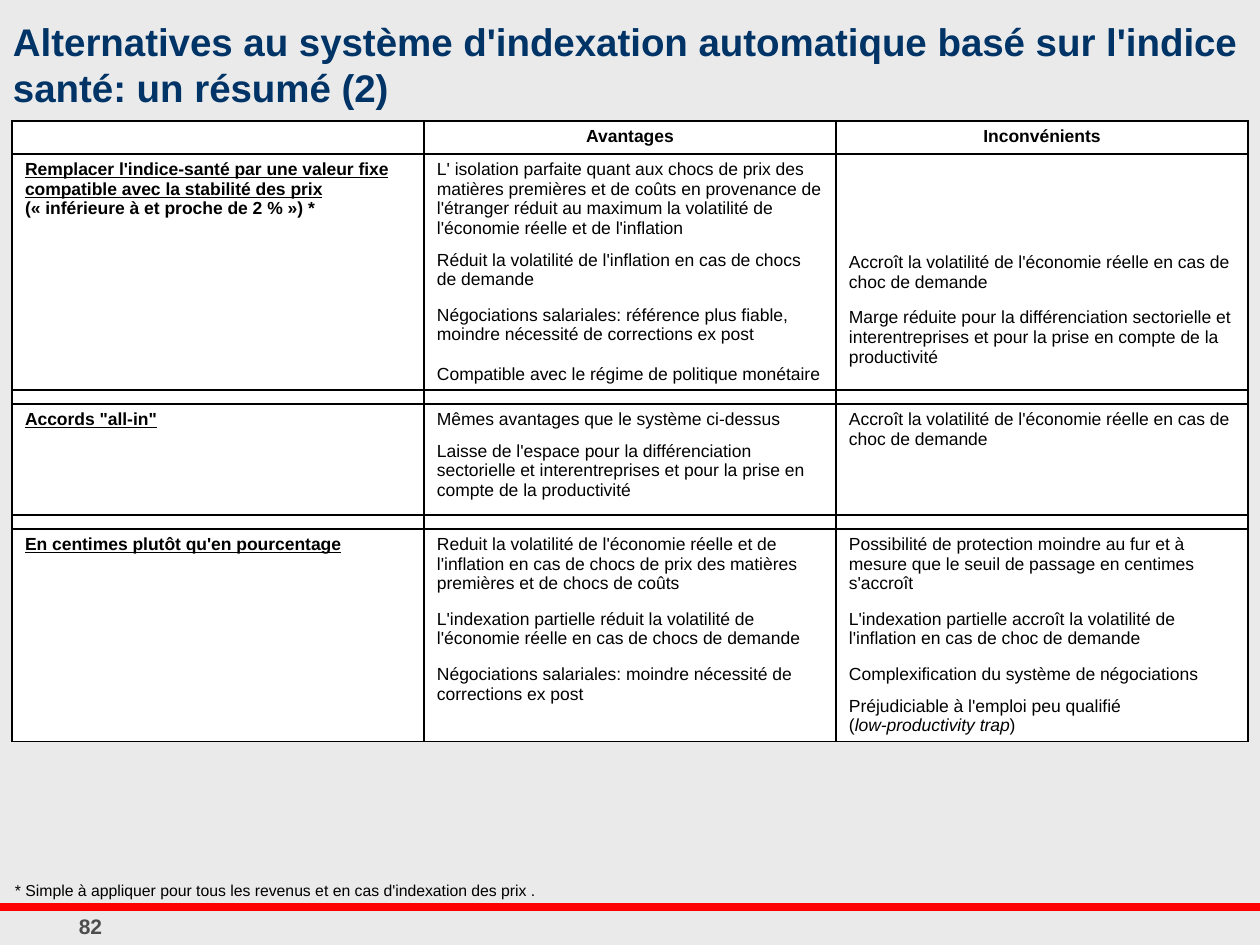
from dataclasses import dataclass

from lxml.etree import SubElement
from pptx import Presentation
from pptx.dml.color import RGBColor
from pptx.enum.shapes import MSO_CONNECTOR
from pptx.enum.text import MSO_ANCHOR, PP_ALIGN
from pptx.oxml.ns import qn
from pptx.util import Emu, Pt

PX = 914400 // 126


@dataclass(frozen=True)
class Theme:
    font: str = "Arial"
    background: str = "EAEAEA"
    title: str = "003366"
    ink: str = "000000"
    cell: str = "FFFFFF"
    rule: str = "FF0000"
    number: str = "4D4D4D"
    title_size: int = 22
    body_size: int = 10
    note_size: int = 9
    number_size: int = 12
    spacer_size: int = 1
    rule_width: float = 4.5
    border_width: int = 1


THEME = Theme()

TITLE = "Alternatives au système d'indexation automatique basé sur l'indice santé: un résumé (2)"
FOOTNOTE = "* Simple à appliquer pour tous les revenus et en cas d'indexation des prix ."
PAGE_NUMBER = "82"
HEADINGS = ["", "Avantages", "Inconvénients"]
DEMAND_SHOCK = "Accroît la volatilité de l'économie réelle en cas de choc de demande"

OPTIONS = [
    {
        "height": 236,
        "drop": 93,
        "name": [
            (0, ("Remplacer l'indice-santé par une valeur fixe compatible avec la stabilité des prix", "bu")),
            (0, ("(« inférieure à et proche de 2 % ») *", "b")),
        ],
        "pros": [
            (0, ("L' isolation parfaite quant aux chocs de prix des matières premières et de coûts en provenance de l'étranger réduit au maximum la volatilité de l'économie réelle et de l'inflation", "")),
            (12, ("Réduit la volatilité de l'inflation en cas de chocs de demande", "")),
            (16, ("Négociations salariales: référence plus fiable, moindre nécessité de corrections ex post", "")),
            (20, ("Compatible avec le régime de politique monétaire", "")),
        ],
        "cons": [
            (0, (DEMAND_SHOCK, "")),
            (16, ("Marge réduite pour la différenciation sectorielle et interentreprises et pour la prise en compte de la productivité", "")),
        ],
    },
    {
        "height": 111,
        "drop": 0,
        "name": [(0, ("Accords \"all-in\"", "bu"))],
        "pros": [
            (0, ("Mêmes avantages que le système ci-dessus", "")),
            (12, ("Laisse de l'espace pour la différenciation sectorielle et interentreprises et pour la prise en compte de la productivité", "")),
        ],
        "cons": [(0, (DEMAND_SHOCK, ""))],
    },
    {
        "height": 212,
        "drop": 0,
        "name": [(0, ("En centimes plutôt qu'en pourcentage", "bu"))],
        "pros": [
            (0, ("Reduit la volatilité de l'économie réelle et de l'inflation en cas de chocs de prix des matières premières et de chocs de coûts", "")),
            (16, ("L'indexation partielle réduit la volatilité de l'économie réelle en cas de chocs de demande", "")),
            (16, ("Négociations salariales: moindre nécessité de corrections ex post", "")),
        ],
        "cons": [
            (0, ("Possibilité de protection moindre au fur et à mesure que le seuil de passage en centimes s'accroît", "")),
            (16, ("L'indexation partielle accroît la volatilité de l'inflation en cas de choc de demande", "")),
            (16, ("Complexification du système de négociations", "")),
            (12, ("Préjudiciable à l'emploi peu qualifié", "")),
            (0, ("(", ""), ("low-productivity trap", "i"), (")", "")),
        ],
    },
]

HEADER_HEIGHT, SPACER_HEIGHT = 32, 14
TABLE_LEFT, TABLE_TOP, COLUMN_WIDTH = 12, 121, 412
MARGIN_X, MARGIN_Y = 13, 6


def px(length):
    return Emu(length * PX)


def add_run(paragraph, text, size, color, style=""):
    run = paragraph.add_run()
    run.text = text
    font = run.font
    font.name, font.size = THEME.font, Pt(size)
    font.color.rgb = RGBColor.from_string(color)
    font.bold, font.italic, font.underline = ("b" in style, "i" in style, "u" in style)


def set_frame(frame, anchor):
    frame.word_wrap = True
    frame.vertical_anchor = anchor
    frame.margin_left = frame.margin_right = px(MARGIN_X)
    frame.margin_top = frame.margin_bottom = px(MARGIN_Y)
    return frame.paragraphs[0]


def add_label(slide, box, text, size, color, style="", align=PP_ALIGN.LEFT):
    label = slide.shapes.add_textbox(*map(px, box))
    paragraph = set_frame(label.text_frame, MSO_ANCHOR.MIDDLE)
    paragraph.alignment = align
    add_run(paragraph, text, size, color, style)


def set_borders(cell):
    properties = cell._tc.get_or_add_tcPr()
    for position, side in enumerate(("lnL", "lnR", "lnT", "lnB")):
        border = SubElement(properties, qn(f"a:{side}"), w=str(Pt(THEME.border_width)))
        fill = SubElement(border, qn("a:solidFill"))
        SubElement(fill, qn("a:srgbClr"), val=THEME.ink)
        properties.insert(position, border)


def fill_cell(cell, paragraphs, align=PP_ALIGN.LEFT, drop=0, spacer=False):
    cell.fill.solid()
    cell.fill.fore_color.rgb = RGBColor.from_string(THEME.cell)
    set_borders(cell)
    cell.margin_left = cell.margin_right = px(MARGIN_X)
    cell.margin_top = px(0 if spacer else MARGIN_Y + drop)
    cell.margin_bottom = px(0 if spacer else MARGIN_Y)
    frame = cell.text_frame
    if not paragraphs:
        size = THEME.spacer_size if spacer else THEME.body_size
        frame.paragraphs[0]._p.get_or_add_endParaRPr().set("sz", str(size * 100))
    for index, (gap, *runs) in enumerate(paragraphs):
        paragraph = frame.add_paragraph() if index else frame.paragraphs[0]
        paragraph.alignment = align
        if gap:
            paragraph.space_before = px(gap)
        for text, style in runs:
            add_run(paragraph, text, THEME.body_size, THEME.ink, style)


def add_comparison(slide):
    rows = [(HEADER_HEIGHT, None)]
    for index, option in enumerate(OPTIONS):
        if index:
            rows.append((SPACER_HEIGHT, None))
        rows.append((option["height"], option))
    size = (COLUMN_WIDTH * len(HEADINGS), sum(height for height, _ in rows))
    table = slide.shapes.add_table(
        len(rows), len(HEADINGS), px(TABLE_LEFT), px(TABLE_TOP), *map(px, size)
    ).table
    table.horz_banding = False
    for column in table.columns:
        column.width = px(COLUMN_WIDTH)
    for row_index, (height, option) in enumerate(rows):
        table.rows[row_index].height = px(height)
        for column_index, heading in enumerate(HEADINGS):
            cell = table.cell(row_index, column_index)
            if option:
                part = ("name", "pros", "cons")[column_index]
                fill_cell(cell, option[part], drop=option["drop"] if part == "cons" else 0)
            elif row_index:
                fill_cell(cell, [], spacer=True)
            else:
                fill_cell(cell, [(0, (heading, "b"))] if heading else [], PP_ALIGN.CENTER)


def main():
    deck = Presentation()
    deck.slide_width, deck.slide_height = px(1260), px(945)
    slide = deck.slides.add_slide(deck.slide_layouts[5])
    slide.background.fill.solid()
    slide.background.fill.fore_color.rgb = RGBColor.from_string(THEME.background)

    rule = slide.shapes.add_connector(MSO_CONNECTOR.STRAIGHT, px(0), px(907), px(1260), px(907))
    rule.line.color.rgb = RGBColor.from_string(THEME.rule)
    rule.line.width = Pt(THEME.rule_width)
    SubElement(rule._element.spPr, qn("a:effectLst"))

    title = slide.shapes.title
    title.left, title.top, title.width, title.height = map(px, (0, 12, 1260, 104))
    heading = set_frame(title.text_frame, MSO_ANCHOR.TOP)
    heading.alignment = PP_ALIGN.LEFT
    add_run(heading, TITLE, THEME.title_size, THEME.title, "b")

    add_comparison(slide)
    add_label(slide, (35, 908, 111, 37), PAGE_NUMBER, THEME.number_size, THEME.number, "b", PP_ALIGN.CENTER)
    add_label(slide, (2, 875, 635, 31), FOOTNOTE, THEME.note_size, THEME.ink)
    deck.save("out.pptx")


if __name__ == "__main__":
    main()
